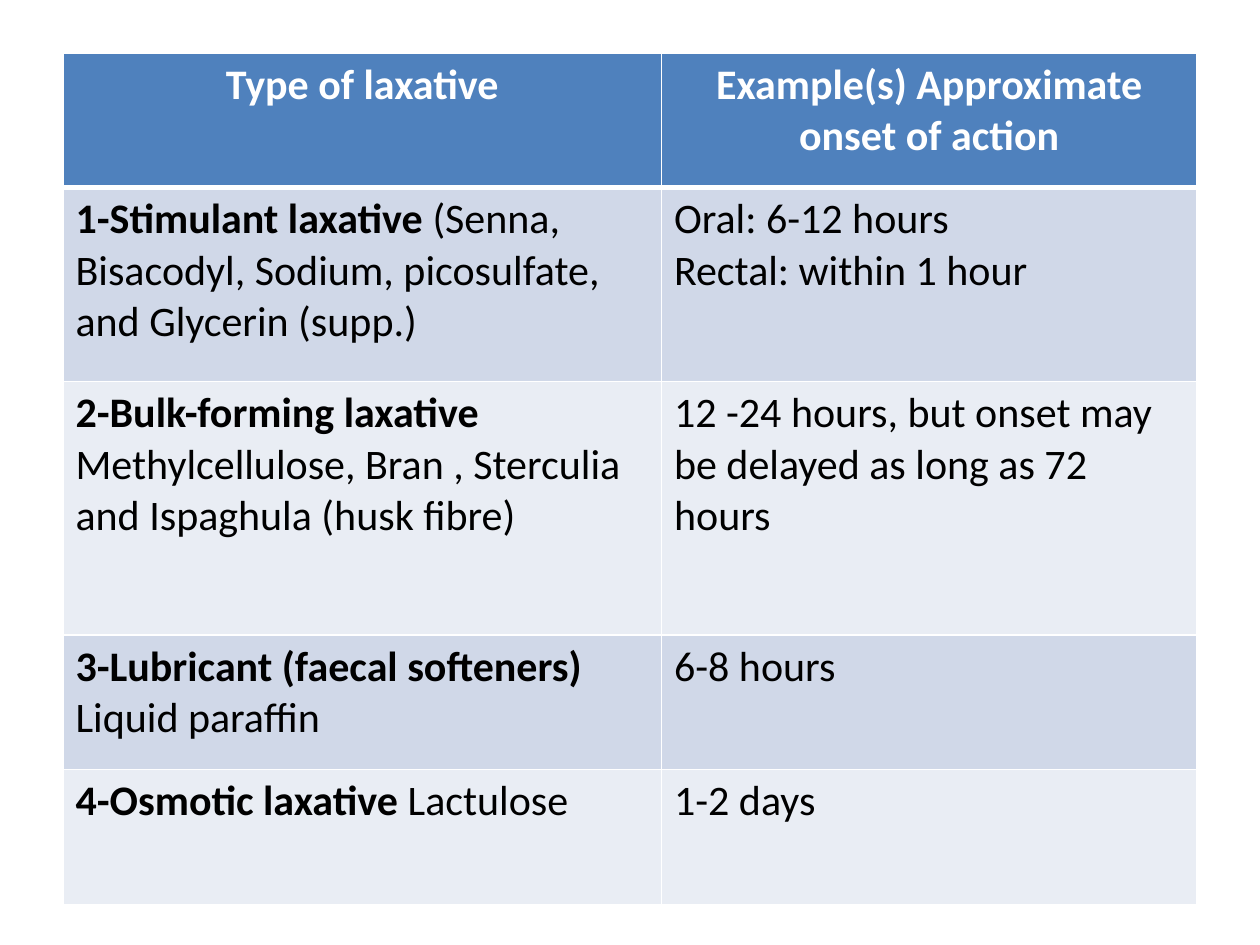
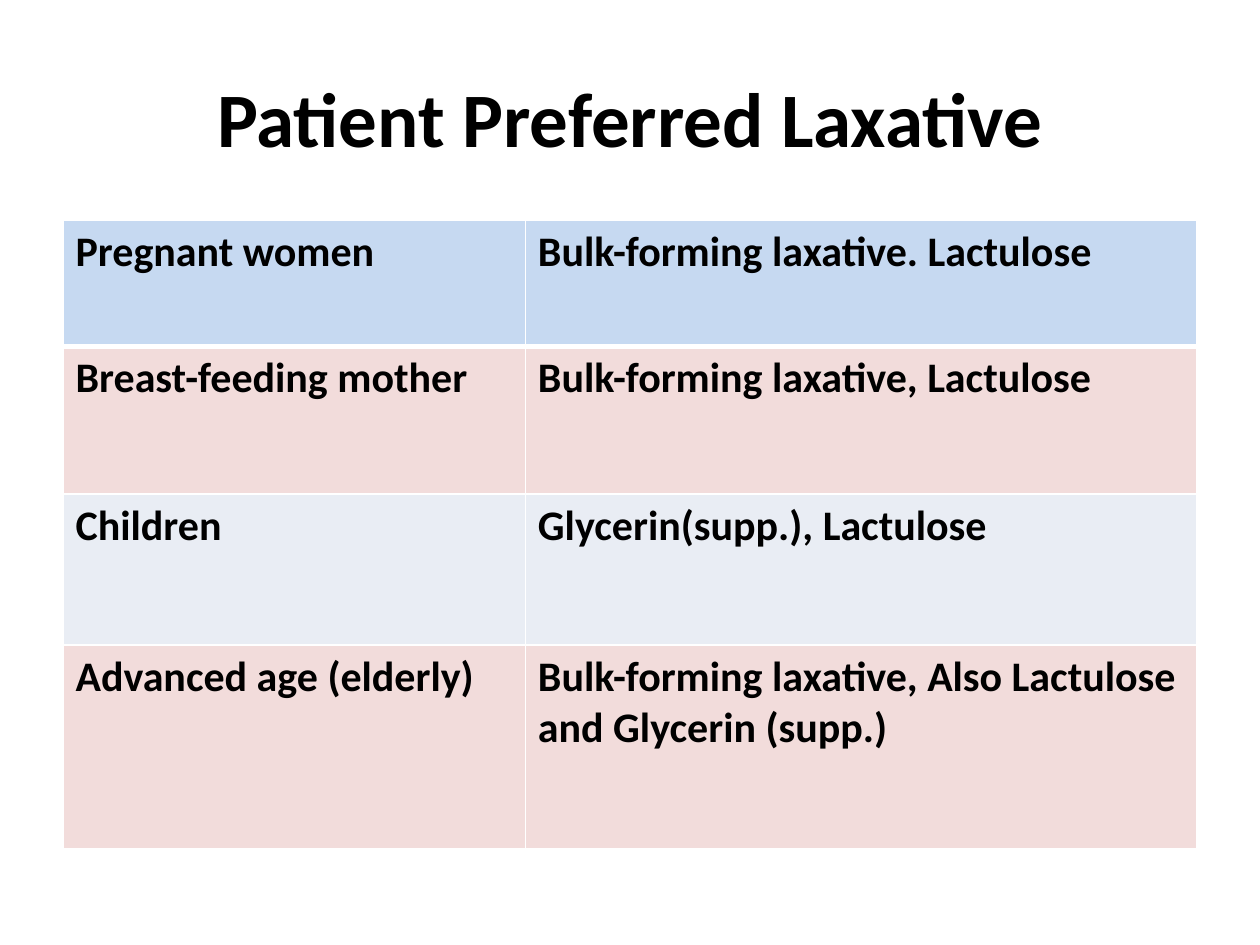
import pptx
import pptx.util
import pptx.dml.color
import pptx.enum.text
import pptx.oxml
import pptx.oxml.ns

STEP = 0.5  # grid step in inches: 20 columns by 15 rows
FONT = "Calibri"
BLACK, WHITE = "000000", "FFFFFF"
BLUE, MIST, PALE = "4F81BD", "D0D8E8", "E9EDF4"
SKY, ROSE = "C6D9F1", "F2DCDB"


def grid(count):
    return pptx.util.Inches(round(count * STEP, 2))


def tint(code):
    return pptx.dml.color.RGBColor.from_string(code)


def write(frame, text, size=24, color=BLACK, bold=False, center=False):
    """Fill a frame: a new line starts a paragraph, a bar ends a bold lead."""
    align = pptx.enum.text.PP_ALIGN
    frame.word_wrap = True
    for index, line in enumerate(text.split("\n")):
        para = frame.paragraphs[0] if index == 0 else frame.add_paragraph()
        para.alignment = align.CENTER if center else align.LEFT
        lead, bar, rest = line.rpartition("|")
        for part, heavy in ((lead, True), (rest, bold)):
            if part:
                run = para.add_run()
                run.text = part
                run.font.name = FONT
                run.font.size = pptx.util.Pt(size)
                run.font.bold = heavy
                run.font.color.rgb = tint(color)


def edge(cell, **widths):
    """Draw white cell borders; widths are points, keyed L, R, T, B."""
    props = cell._tc.get_or_add_tcPr()
    space = pptx.oxml.ns.nsdecls("a")
    for index, (side, width) in enumerate(widths.items()):
        props.insert(index, pptx.oxml.parse_xml(
            f'<a:ln{side} {space} w="{pptx.util.Pt(width)}"><a:solidFill>'
            f'<a:srgbClr val="{WHITE}"/></a:solidFill></a:ln{side}>'))


class Deck:
    def __init__(self):
        self.file = pptx.Presentation()
        self.file.slide_width = grid(20)
        self.file.slide_height = grid(15)
        self.slide = None

    def page(self):
        self.slide = self.file.slides.add_slide(self.file.slide_layouts[6])
        fill = self.slide.background.fill
        fill.solid()
        fill.fore_color.rgb = tint(WHITE)

    def title(self, text):
        box = self.slide.shapes.add_textbox(
            grid(1), grid(0.6), grid(18), grid(2.5))
        box.text_frame.vertical_anchor = pptx.enum.text.MSO_ANCHOR.MIDDLE
        write(box.text_frame, text, size=44, bold=True, center=True)

    def table(self, top, cols, rows, fills, texts, head=None, **style):
        """Place a table; head is the text style of its first row."""
        table = self.slide.shapes.add_table(
            len(rows), len(cols), grid(1), grid(top),
            grid(sum(cols)), grid(sum(rows))).table
        for col, width in zip(table.columns, cols):
            col.width = grid(width)
        for r, (high, fill, line) in enumerate(zip(rows, fills, texts)):
            table.rows[r].height = grid(high)
            for c, text in enumerate(line):
                cell = table.cell(r, c)
                cell.fill.solid()
                cell.fill.fore_color.rgb = tint(fill)
                # The rule under the first row is heavier
                edge(cell, L=1, R=1, T=3 if r == 1 else 1,
                     B=3 if r == 0 else 1)
                write(cell.text_frame, text,
                      **(head if head and r == 0 else style))


def main():
    deck = Deck()

    # Laxative types and onset
    deck.page()
    deck.table(
        0.84, (9.5, 8.5), (2.14, 3.08, 4.02, 2.14, 2.14),
        (BLUE, MIST, PALE, MIST, PALE),
        (("Type of laxative", "Example(s) Approximate onset of action"),
         ("1-Stimulant laxative |(Senna, Bisacodyl, Sodium, picosulfate, "
          "and Glycerin (supp.)",
          "Oral: 6-12 hours\nRectal: within 1 hour"),
         ("2-Bulk-forming laxative |Methylcellulose, Bran , Sterculia "
          "and Ispaghula (husk fibre)",
          "12 -24 hours, but onset may be delayed as long as 72 hours"),
         ("3-Lubricant (faecal softeners) |Liquid paraffin", "6-8 hours"),
         ("4-Osmotic laxative |Lactulose", "1-2 days")),
        head=dict(color=WHITE, bold=True, center=True))

    # Choice by patient group
    deck.page()
    deck.title("Patient Preferred Laxative")
    deck.table(
        3.5, (7.34, 10.66), (2, 2.34, 2.4, 3.24),
        (SKY, ROSE, PALE, ROSE),
        (("Pregnant women", "Bulk-forming laxative. Lactulose"),
         ("Breast-feeding mother", "Bulk-forming laxative, Lactulose"),
         ("Children", "Glycerin(supp.), Lactulose"),
         ("Advanced age (elderly)",
          "Bulk-forming laxative, Also Lactulose and Glycerin (supp.)")),
        bold=True)

    deck.file.save("out.pptx")


if __name__ == "__main__":
    main()
